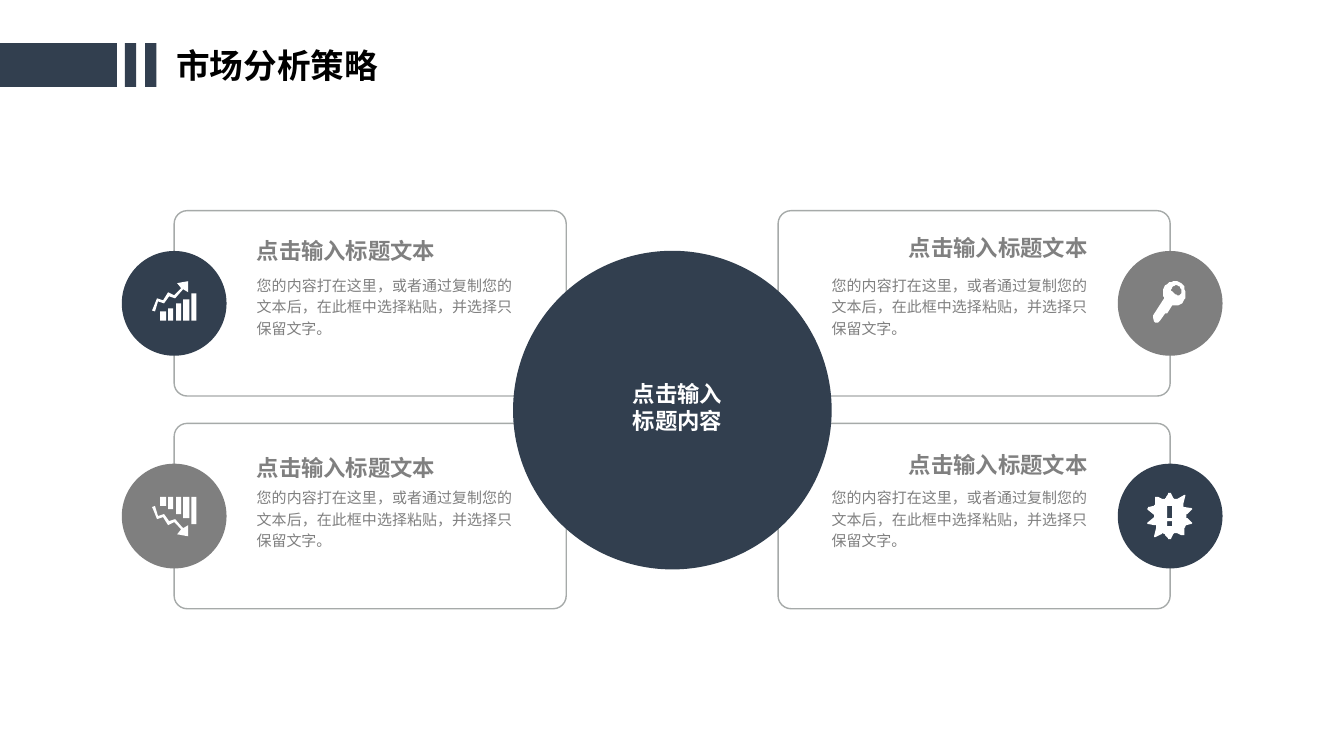
from pptx import Presentation
from pptx.dml.color import RGBColor
from pptx.enum.shapes import MSO_SHAPE
from pptx.enum.text import MSO_ANCHOR, MSO_AUTO_SIZE, PP_ALIGN
from pptx.util import Cm, Pt

NAVY, GREY, TEXT_GREY, BORDER, WHITE, BLACK = (
    "323F4F", "7F7F7F", "808080", "A6AAA9", "FFFFFF", "000000")
ICON_UNIT = Cm(2.54) / 100
CARD_WIDTH, CARD_HEIGHT = Cm(9.88), Cm(4.67)
BADGE_SIZE = Cm(2.64)
HEADING = "点击输入标题文本"
BODY = "您的内容打在这里，或者通过复制您的文本后，在此框中选择粘贴，并选择只保留文字。"

TREND_ARROW = [
    (17, 15), (23, 17), (30, 9), (31, 8), (36, 11), (36, 0), (30, 1), (25, 2), (29, 7),
    (22, 14), (16, 11), (11, 19), (5, 17), (1, 27), (0, 29), (3, 30), (6, 20), (12, 22)]
BAR_TOPS = [30, 27, 22, 18, 12]
ICON_BASE = 39
KEY = [
    [(27, 13), (25, 15, 24, 14, 21, 12), (19, 10, 17, 9, 19, 7),
     (20, 4, 23, 4, 26, 5), (28, 7, 29, 10, 27, 13)],
    [(32, 10), (31, 3, 26, -1, 20, 0), (14, 1, 9, 6, 10, 12), (10, 14, 11, 16, 11, 17),
     (0, 34), (0, 36), (1, 40), (2, 41), (5, 41), (7, 39), (12, 32), (14, 32), (19, 24),
     (21, 24, 23, 24, 25, 24), (31, 22, 33, 16, 32, 10)]]
ALERT = [
    [(24, 25), (19, 25), (19, 13), (24, 13)],
    [(24, 33), (19, 33), (19, 28), (24, 28)],
    [(43, 29), (39, 25), (37, 24, 37, 22, 39, 21), (43, 17), (44, 16, 44, 15, 42, 15),
     (36, 14), (35, 14, 34, 13, 35, 11), (37, 3), (38, 2, 37, 1, 36, 2),
     (29, 6), (28, 7, 26, 6, 25, 5), (23, 1), (22, -1, 21, -1, 20, 1),
     (18, 4), (17, 6, 15, 6, 14, 6), (10, 4), (8, 3, 7, 4, 7, 6),
     (7, 10), (8, 11, 6, 13, 5, 13), (1, 14), (-1, 15, -1, 16, 0, 17),
     (5, 21), (6, 22, 6, 24, 5, 25), (0, 29), (-1, 30, -1, 31, 1, 31),
     (6, 32), (8, 32, 9, 33, 8, 35), (6, 43), (5, 44, 6, 45, 7, 44),
     (13, 41), (15, 40, 16, 40, 17, 42), (20, 45), (21, 47, 22, 47, 23, 45),
     (25, 41), (26, 40, 28, 39, 29, 40), (33, 42), (35, 43, 36, 42, 36, 40),
     (36, 36), (36, 35, 37, 33, 38, 32), (42, 31), (44, 31, 44, 30, 43, 29)]]


def color(hex_string):
    return RGBColor.from_string(hex_string)


def paint(shape, fill=None, line=None):
    shape.shadow.inherit = False
    if fill:
        shape.fill.solid()
        shape.fill.fore_color.rgb = color(fill)
    else:
        shape.fill.background()
    if line:
        shape.line.color.rgb = color(line)
        shape.line.width = Pt(1)
    else:
        shape.line.fill.background()


def add_block(page, kind, left, top, width, height, fill=None, line=None):
    shape = page.shapes.add_shape(kind, left, top, width, height)
    paint(shape, fill, line)
    return shape


def style(para, size, hex_string, bold, align):
    para.alignment = align
    para.font.name = "Arial"
    para.font.size = Pt(size)
    para.font.bold = bold
    para.font.color.rgb = color(hex_string)


def add_text(page, text, left, top, width, height, size, hex_string,
             bold=True, align=PP_ALIGN.LEFT, anchor=MSO_ANCHOR.MIDDLE, spacing=1.0):
    frame = page.shapes.add_textbox(left, top, width, height).text_frame
    frame.word_wrap = True
    frame.vertical_anchor = anchor
    frame.margin_left = frame.margin_right = frame.margin_top = frame.margin_bottom = 0
    para = frame.paragraphs[0]
    para.text = text
    para.line_spacing = spacing
    style(para, size, hex_string, bold, align)


def flatten(contour, steps=8):
    points = [contour[0]]
    for segment in contour[1:]:
        if len(segment) == 2:
            points.append(segment)
            continue
        start = points[-1]
        controls = [start, segment[:2], segment[2:4], segment[4:]]
        for step in range(1, steps + 1):
            t = step / steps
            weights = ((1 - t) ** 3, 3 * t * (1 - t) ** 2, 3 * t * t * (1 - t), t ** 3)
            points.append(tuple(
                sum(weight * control[axis] for weight, control in zip(weights, controls))
                for axis in (0, 1)))
    return points


def trend_icon(falling=False):
    contours = [TREND_ARROW]
    for index, top in enumerate(BAR_TOPS):
        left = 8 + 7.75 * index
        right = left + 5.5
        contours.append([(left, top), (right, top), (right, ICON_BASE), (left, ICON_BASE)])
    if falling:
        contours = [[(x, ICON_BASE - y) for x, y in contour] for contour in contours]
    return contours


def add_badge(page, center_x, center_y, fill, contours, offset):
    add_block(page, MSO_SHAPE.OVAL, center_x - BADGE_SIZE // 2, center_y - BADGE_SIZE // 2,
              BADGE_SIZE, BADGE_SIZE, fill)
    outlines = [flatten(contour) for contour in contours]
    builder = page.shapes.build_freeform(*outlines[0][0], scale=ICON_UNIT)
    for index, points in enumerate(outlines):
        if index:
            builder.move_to(*points[0])
        builder.add_line_segments(points[1:], close=True)
    icon = builder.convert_to_shape(center_x + round(offset[0] * ICON_UNIT),
                                    center_y + round(offset[1] * ICON_UNIT))
    paint(icon, WHITE)


def add_card_frame(page, left, top):
    frame = add_block(page, MSO_SHAPE.ROUNDED_RECTANGLE, left, top,
                      CARD_WIDTH, CARD_HEIGHT, line=BORDER)
    frame.adjustments[0] = 0.07


def add_card_content(page, left, top, on_right, heading_drop, fill, contours, offset):
    body_left = left + (Cm(1.35) if on_right else Cm(2.08))
    body_width, heading_width = Cm(6.45), Cm(5.18)
    heading_left = body_left + (body_width - heading_width if on_right else 0)
    add_text(page, HEADING, heading_left, top + heading_drop, heading_width, Cm(1.12), 16,
             TEXT_GREY, align=PP_ALIGN.RIGHT if on_right else PP_ALIGN.LEFT,
             spacing=1.0 if on_right else 1.2)
    add_text(page, BODY, body_left, top + Cm(1.56), body_width, Cm(1.4), 10.7, TEXT_GREY,
             bold=False, align=PP_ALIGN.JUSTIFY, anchor=MSO_ANCHOR.TOP, spacing=1.2)
    add_badge(page, left + (CARD_WIDTH if on_right else 0), top + CARD_HEIGHT // 2,
              fill, contours, offset)


def add_header(page, top, height):
    for left, width in ((0, 2.95), (3.15, 0.28), (3.66, 0.28)):
        add_block(page, MSO_SHAPE.RECTANGLE, Cm(left), top, Cm(width), height, NAVY)
    title = page.shapes.title
    title.left, title.top, title.width, title.height = Cm(4.19), Cm(1), Cm(8.94), Cm(1.28)
    frame = title.text_frame
    frame.text = "市场分析策略"
    frame.auto_size = MSO_AUTO_SIZE.NONE
    frame.vertical_anchor = MSO_ANCHOR.MIDDLE
    style(frame.paragraphs[0], 24, BLACK, True, PP_ALIGN.LEFT)


def add_hub(page, left, top, size):
    add_block(page, MSO_SHAPE.OVAL, left, top, size, size, NAVY)
    add_text(page, "点击输入标题内容", left + Cm(2.95), top + Cm(3.07), Cm(2.39), Cm(1.75),
             16, WHITE, align=PP_ALIGN.CENTER)


def main():
    deck = Presentation()
    deck.slide_width, deck.slide_height = Cm(33.87), Cm(19.05)
    page = deck.slides.add_slide(deck.slide_layouts[5])
    add_header(page, Cm(1.09), Cm(1.1))
    left, right, upper, lower = Cm(4.39), Cm(19.61), Cm(5.31), Cm(10.67)
    cards = [
        (left, upper, False, Cm(0.38), NAVY, trend_icon(), (-22, -22)),
        (left, lower, False, Cm(0.48), GREY, trend_icon(falling=True), (-22, -19)),
        (right, upper, True, Cm(0.38), GREY, KEY, (-17, -22)),
        (right, lower, True, Cm(0.48), NAVY, ALERT, (-22, -23))]
    for card in cards:
        add_card_frame(page, *card[:2])
    add_hub(page, Cm(12.93), Cm(6.32), Cm(8.03))
    for card in cards:
        add_card_content(page, *card)
    deck.save("out.pptx")


if __name__ == "__main__":
    main()
